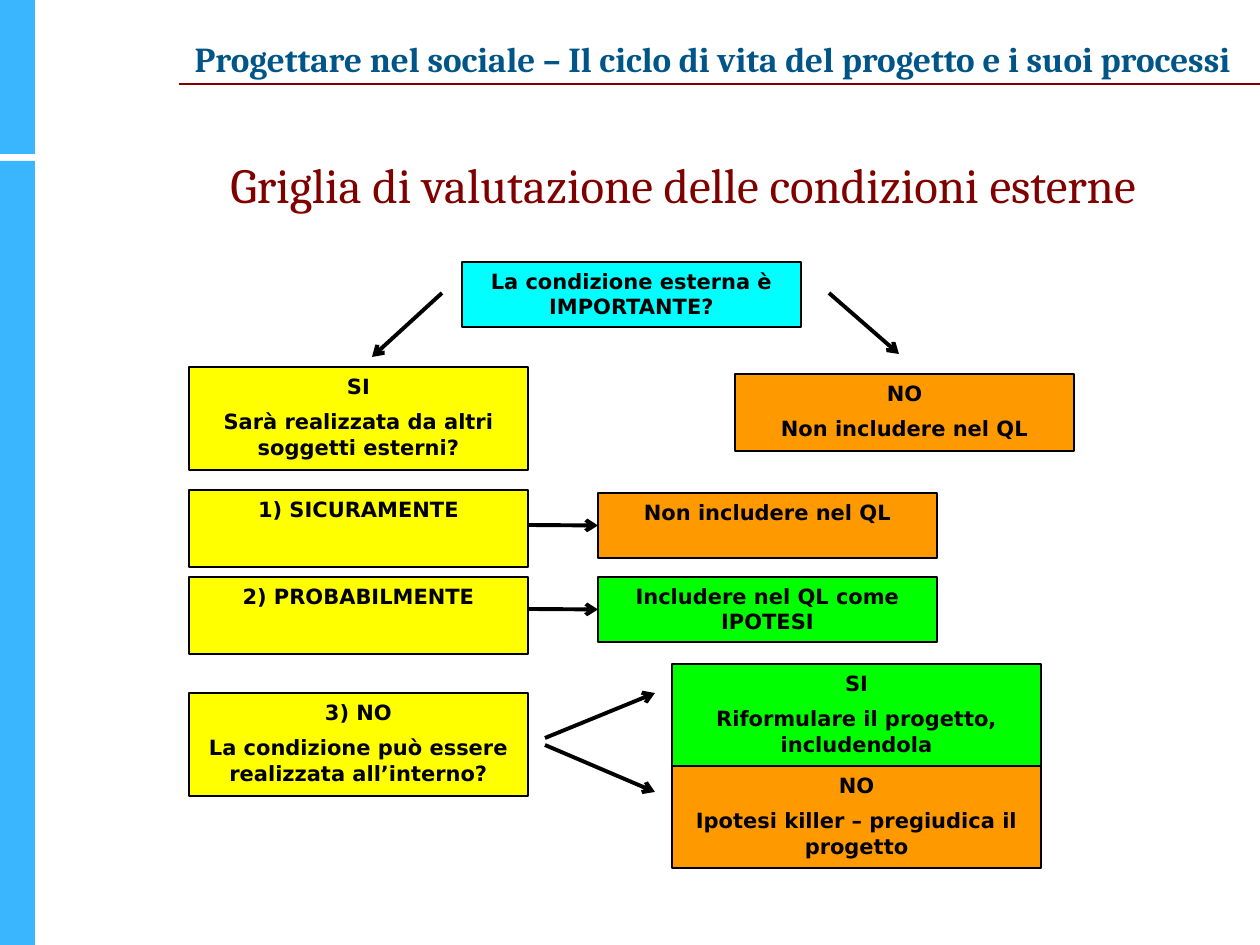
from pptx import Presentation
from pptx import util as u
from pptx.dml.color import RGBColor
from pptx.enum import shapes, text
from pptx.oxml.ns import qn
from lxml import etree

SCALE = 914400 / 126  # EMU per px

SKY = RGBColor(0x3A, 0xB5, 0xFF)
NAVY = RGBColor(0x00, 0x55, 0x88)
MAROON = RGBColor(0x80, 0x00, 0x00)
CYAN = RGBColor(0x00, 0xFF, 0xFF)
YELLOW = RGBColor(0xFF, 0xFF, 0x00)
ORANGE = RGBColor(0xFF, 0x99, 0x00)
GREEN = RGBColor(0x00, 0xFF, 0x00)
BLACK = RGBColor(0x00, 0x00, 0x00)

SERIF = "Cambria"
SANS = "DejaVu Sans"


def px(*values):
    return [u.Emu(round(v * SCALE)) for v in values]


def write(tf, *lines, font=SANS, size=12, color=BLACK, bold=True, gap=6,
          spacing=1.0, anchor=text.MSO_ANCHOR.TOP, wrap=True):
    tf.word_wrap = wrap
    tf.auto_size = text.MSO_AUTO_SIZE.NONE
    tf.vertical_anchor = anchor
    for i, line in enumerate(lines):
        p = tf.add_paragraph() if i else tf.paragraphs[0]
        p.alignment = text.PP_ALIGN.CENTER
        p.line_spacing = spacing
        p.space_before = u.Pt(gap if i else 0)
        r = p.add_run()
        r.text = line
        r.font.name, r.font.size, r.font.bold = font, u.Pt(size), bold
        r.font.color.rgb = color


class FlowSlide:
    def __init__(self, prs):
        self.s = prs.slides.add_slide(prs.slide_layouts[5])

    def title(self, x, y, w, h, line, **fmt):
        sp = self.s.shapes.title
        sp.left, sp.top, sp.width, sp.height = px(x, y, w, h)
        write(sp.text_frame, line, **fmt)

    def label(self, x, y, w, h, line, **fmt):
        sp = self.s.shapes.add_textbox(*px(x, y, w, h))
        write(sp.text_frame, line, **fmt)

    def rect(self, x, y, w, h, fill):
        sp = self.s.shapes.add_shape(shapes.MSO_SHAPE.RECTANGLE, *px(x, y, w, h))
        sp.shadow.inherit = False
        sp.fill.solid()
        sp.fill.fore_color.rgb = fill
        sp.line.fill.background()
        return sp

    def box(self, x, y, w, h, fill, *lines):
        sp = self.rect(x, y, w, h, fill)
        sp.line.color.rgb = BLACK
        sp.line.width = u.Pt(1)
        write(sp.text_frame, *lines)
        return sp

    def line(self, x1, y1, x2, y2, color=BLACK, width=2.25):
        c = self.s.shapes.add_connector(shapes.MSO_CONNECTOR.STRAIGHT, *px(x1, y1, x2, y2))
        c.line.color.rgb = color
        c.line.width = u.Pt(width)
        etree.SubElement(c._element.spPr, qn("a:effectLst"))
        return c

    def arrow(self, x1, y1, x2, y2):
        c = self.line(x1, y1, x2, y2)
        etree.SubElement(c.line._get_or_add_ln(), qn("a:tailEnd"), type="arrow")
        return c


def main():
    prs = Presentation()
    prs.slide_width, prs.slide_height = u.Inches(10), u.Inches(7.5)
    f = FlowSlide(prs)

    # Side bars and header
    f.rect(0, 161, 35, 784, SKY)
    f.rect(0, 0, 35, 154, SKY)
    f.line(179, 84, 1260, 84, color=MAROON, width=1.5)
    f.label(169, 31, 1088, 88,
            "Progettare nel sociale – Il ciclo di vita del progetto e i suoi processi",
            font=SERIF, size=20, color=NAVY, wrap=False)
    f.title(106, 136, 1154, 84, "Griglia di valutazione delle condizioni esterne",
            font=SERIF, size=28, color=MAROON, bold=False, spacing=0.9,
            anchor=text.MSO_ANCHOR.BOTTOM)

    # First question and its two answers
    left, width = 189, 339
    f.box(462, 262, width, 65, CYAN, "La condizione esterna è IMPORTANTE?")
    f.box(735, 374, width, 77, ORANGE, "NO", "Non includere nel QL")
    f.box(left, 367, width, 103, YELLOW, "SI", "Sarà realizzata da altri soggetti esterni?")
    f.arrow(829, 293, 899, 354)
    f.arrow(442, 293, 372, 357)

    # Certain and probable cases, each with its outcome
    mid = 598
    for case, y, outcome, out_y, fill in (
            ("1) SICURAMENTE", 490, "Non includere nel QL", 493, ORANGE),
            ("2) PROBABILMENTE", 577, "Includere nel QL come IPOTESI", 577, GREEN)):
        f.box(left, y, width, 77, YELLOW, case)
        target = f.box(mid, out_y, width, 65, fill, outcome)
        arrow_y = out_y + 32
        f.arrow(left + width, arrow_y, mid, arrow_y).end_connect(target, 1)

    # Negative case, which splits in two
    f.box(left, 693, width, 103, YELLOW, "3) NO",
          "La condizione può essere realizzata all’interno?")
    f.arrow(545, 738, 655, 693)
    f.arrow(545, 745, 655, 792)
    f.box(672, 664, 369, 102, GREEN, "SI", "Riformulare il progetto, includendola")
    f.box(672, 766, 369, 102, ORANGE, "NO", "Ipotesi killer – pregiudica il progetto")

    prs.save("out.pptx")


if __name__ == "__main__":
    main()
